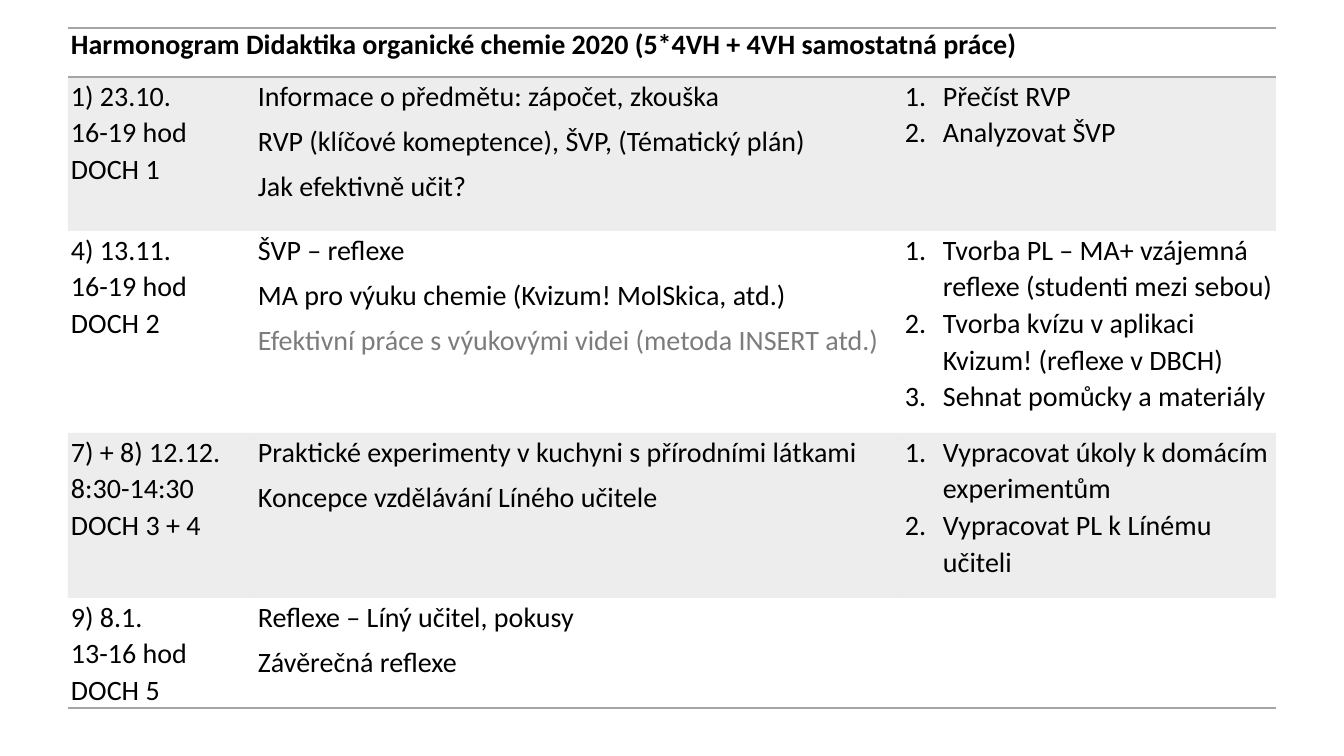
from lxml import etree
from pptx import Presentation
from pptx.dml.color import RGBColor
from pptx.oxml.ns import qn
from pptx.util import Emu, Pt

PX = 914400 / 100.8
THEME = {"font": "Calibri", "size": 20, "text": "000000", "dim": "7C7C7C",
         "line": "A5A5A5", "band": "A5A5A5", "alpha": 20}
PLAIN = "{2D5ABB26-0587-4C30-8999-92F81FD0307C}"  # table style without lines or fills

TITLE = "Harmonogram Didaktika organické chemie 2020 (5*4VH + 4VH samostatná práce)"
DIM = "Efektivní práce s výukovými videi (metoda INSERT atd.)"
# Each meeting: date, topics, tasks
MEETS = [
    (["1) 23.10.", "16-19 hod", "DOCH 1"],
     ["Informace o předmětu: zápočet, zkouška",
      "RVP (klíčové komeptence), ŠVP, (Tématický plán)",
      "Jak efektivně učit?"],
     ["Přečíst RVP", "Analyzovat ŠVP"]),
    (["4) 13.11.", "16-19 hod", "DOCH 2"],
     ["ŠVP – reflexe", "MA pro výuku chemie (Kvizum! MolSkica, atd.)", DIM],
     ["Tvorba PL – MA+ vzájemná reflexe (studenti mezi sebou)",
      "Tvorba kvízu v aplikaci Kvizum! (reflexe v DBCH)",
      "Sehnat pomůcky a materiály"]),
    (["7) + 8) 12.12.", "8:30-14:30", "DOCH 3 + 4"],
     ["Praktické experimenty v kuchyni s přírodními látkami",
      "Koncepce vzdělávání Líného učitele"],
     ["Vypracovat úkoly k domácím experimentům",
      "Vypracovat PL k Línému učiteli"]),
    (["9) 8.1.", "13-16 hod", "DOCH 5"],
     ["Reflexe – Líný učitel, pokusy", "Závěrečná reflexe"],
     []),
]
WIDTHS = [187, 647, 374]
HEIGHTS = [49, 154, 202, 165, 110]


def px(n):
    return Emu(round(n * PX))


def write(para, text, bold=False):
    run = para.add_run()
    run.text = text
    run.font.name = THEME["font"]
    run.font.size = Pt(THEME["size"])
    run.font.bold = bold
    run.font.color.rgb = RGBColor.from_string(THEME["dim" if text == DIM else "text"])


deck = Presentation()
deck.slide_width, deck.slide_height = px(1344), px(756)
slide = deck.slides.add_slide(deck.slide_layouts[6])

# Table grid
frame = slide.shapes.add_table(len(HEIGHTS), len(WIDTHS), px(68), px(28),
                               px(sum(WIDTHS)), px(sum(HEIGHTS)))
table = frame.table
table.first_row = table.horz_banding = False
table._tbl.tblPr.find(qn("a:tableStyleId")).text = PLAIN
for col, width in zip(table.columns, WIDTHS):
    col.width = px(width)
for row, height in zip(table.rows, HEIGHTS):
    row.height = px(height)

# Heading
table.cell(0, 0).merge(table.cell(0, len(WIDTHS) - 1))
write(table.cell(0, 0).text_frame.paragraphs[0], TITLE, bold=True)

# Meetings
for r, meet in enumerate(MEETS, 1):
    for c, lines in enumerate(meet):
        body = table.cell(r, c).text_frame
        for i, line in enumerate(lines):
            para = body.add_paragraph() if i else body.paragraphs[0]
            para.line_spacing = 1.07
            if c == 1:
                para.space_after = Pt(6)
            if c == 2:
                props = para._p.get_or_add_pPr()
                props.set("marL", str(px(38)))
                props.set("indent", str(px(-38)))
                etree.SubElement(props, qn("a:buFont"), typeface="+mj-lt")
                etree.SubElement(props, qn("a:buAutoNum"), type="arabicPeriod")
            write(para, line)

# Margins, rules and bands
RULES = {0: ["a:lnT", "a:lnB"], len(MEETS): ["a:lnB"]}
for r, row in enumerate(table.rows):
    for cell in row.cells:
        cell.margin_left = cell.margin_right = px(3)
        cell.margin_top = cell.margin_bottom = 0
        props = cell._tc.get_or_add_tcPr()
        for side in RULES.get(r, []):
            rule = etree.SubElement(props, qn(side), w=str(Pt(1)))
            paint = etree.SubElement(rule, qn("a:solidFill"))
            etree.SubElement(paint, qn("a:srgbClr"), val=THEME["line"])
        if r % 2:
            cell.fill.solid()
            cell.fill.fore_color.rgb = RGBColor.from_string(THEME["band"])
            tint = props.find(qn("a:solidFill")).find(qn("a:srgbClr"))
            etree.SubElement(tint, qn("a:alpha"), val=str(THEME["alpha"] * 1000))
        else:
            cell.fill.background()

deck.save("out.pptx")
